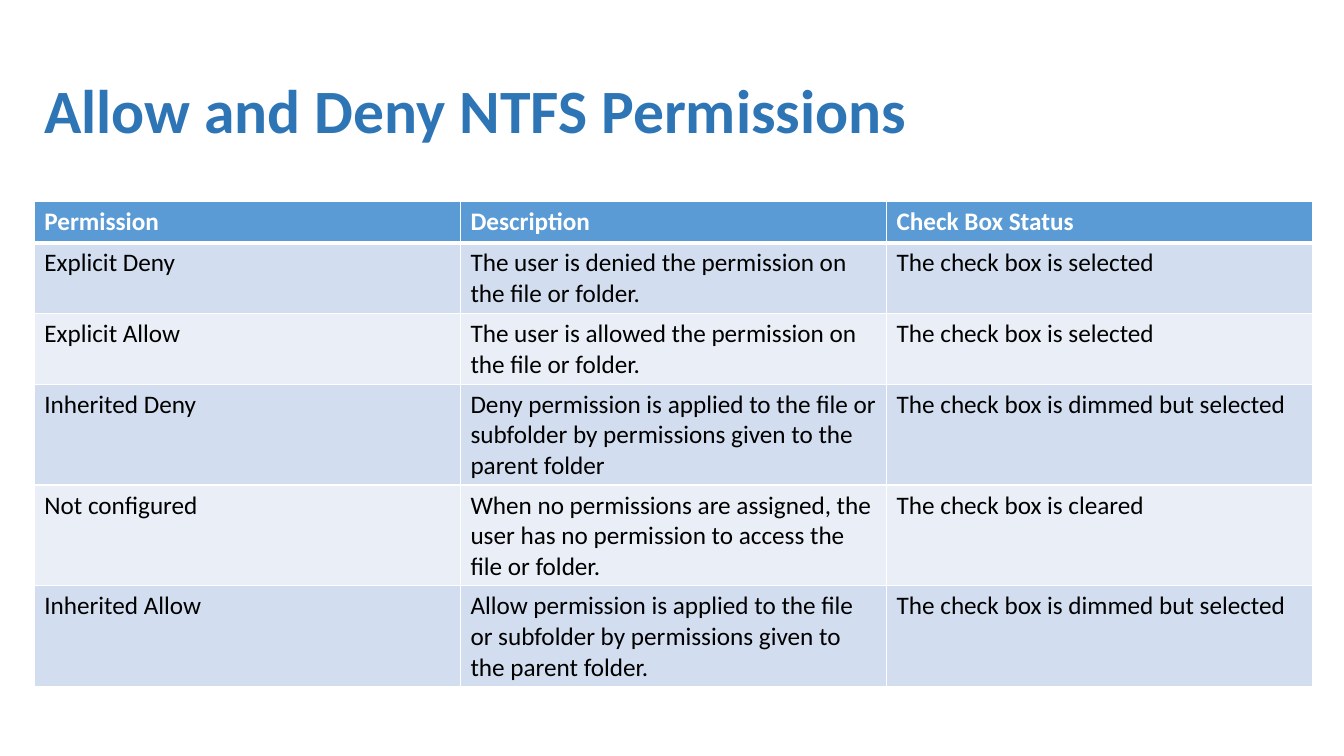
from lxml.etree import SubElement
from pptx import Presentation
from pptx.dml.color import RGBColor
from pptx.enum.text import MSO_ANCHOR
from pptx.oxml.ns import qn
from pptx.util import Inches, Pt

FONT = "Calibri"
TITLE_BLUE = RGBColor(0x2E, 0x75, 0xB6)
HEADER_BLUE = RGBColor(0x5B, 0x9B, 0xD5)
BAND_DARK = RGBColor(0xD2, 0xDE, 0xEF)
BAND_LIGHT = RGBColor(0xEA, 0xEF, 0xF7)
WHITE = RGBColor(0xFF, 0xFF, 0xFF)
BLACK = RGBColor(0, 0, 0)

LEFT, WIDTH = 0.34, 12.68
ROW_HEIGHT = 0.41
PERMISSIONS = [
    ("Permission", "Description", "Check Box Status"),
    ("Explicit Deny", "The user is denied the permission on the file or folder.",
     "The check box is selected"),
    ("Explicit Allow", "The user is allowed the permission on the file or folder.",
     "The check box is selected"),
    ("Inherited Deny",
     "Deny permission is applied to the file or subfolder by permissions given to the parent folder",
     "The check box is dimmed but selected"),
    ("Not configured",
     "When no permissions are assigned, the user has no permission to access the file or folder.",
     "The check box is cleared"),
    ("Inherited Allow",
     "Allow permission is applied to the file or subfolder by permissions given to the parent folder.",
     "The check box is dimmed but selected"),
]


def add_run(paragraph, text, size, color, bold):
    """Add one formatted run to a paragraph."""
    run = paragraph.add_run()
    run.text = text
    run.font.name = FONT
    run.font.size = Pt(size)
    run.font.bold = bold
    run.font.color.rgb = color


def add_border(cell, side, width):
    """Draw a solid white border on one side of a cell."""
    properties = cell._tc.get_or_add_tcPr()
    line = SubElement(properties, qn(f"a:ln{side}"), w=str(Pt(width)))
    fill = SubElement(line, qn("a:solidFill"))
    SubElement(fill, qn("a:srgbClr"), val=str(WHITE))


def add_title(slide, left, top, width, height):
    """Place the slide title in the given box."""
    frame = slide.shapes.add_textbox(
        Inches(left), Inches(top), Inches(width), Inches(height)).text_frame
    frame.word_wrap = True
    frame.vertical_anchor = MSO_ANCHOR.MIDDLE
    paragraph = frame.paragraphs[0]
    paragraph.line_spacing = 0.9
    add_run(paragraph, "Allow and Deny NTFS Permissions", 44, TITLE_BLUE, True)


def add_permission_table(slide, left, top, width):
    """Place the banded permission table, its rows growing with their text."""
    row_count, column_count = len(PERMISSIONS), len(PERMISSIONS[0])
    table = slide.shapes.add_table(
        row_count, column_count, Inches(left), Inches(top),
        Inches(width), Inches(ROW_HEIGHT * row_count)).table
    for row_index, texts in enumerate(PERMISSIONS):
        is_header = row_index == 0
        band = BAND_DARK if row_index % 2 else BAND_LIGHT
        for column_index, text in enumerate(texts):
            cell = table.cell(row_index, column_index)
            widths = {"L": 1, "R": 1, "T": 3 if row_index == 1 else 1, "B": 3 if is_header else 1}
            for side, border_width in widths.items():
                add_border(cell, side, border_width)
            cell.fill.solid()
            cell.fill.fore_color.rgb = HEADER_BLUE if is_header else band
            add_run(cell.text_frame.paragraphs[0], text, 18,
                    WHITE if is_header else BLACK, is_header)


def main():
    """Build the slide and save it."""
    presentation = Presentation()
    presentation.slide_width = Inches(13.33)
    presentation.slide_height = Inches(7.5)
    slide = presentation.slides.add_slide(presentation.slide_layouts[6])
    add_title(slide, LEFT, 0.4, WIDTH, 1.45)
    add_permission_table(slide, LEFT, 2, WIDTH)
    presentation.save("out.pptx")


if __name__ == "__main__":
    main()
